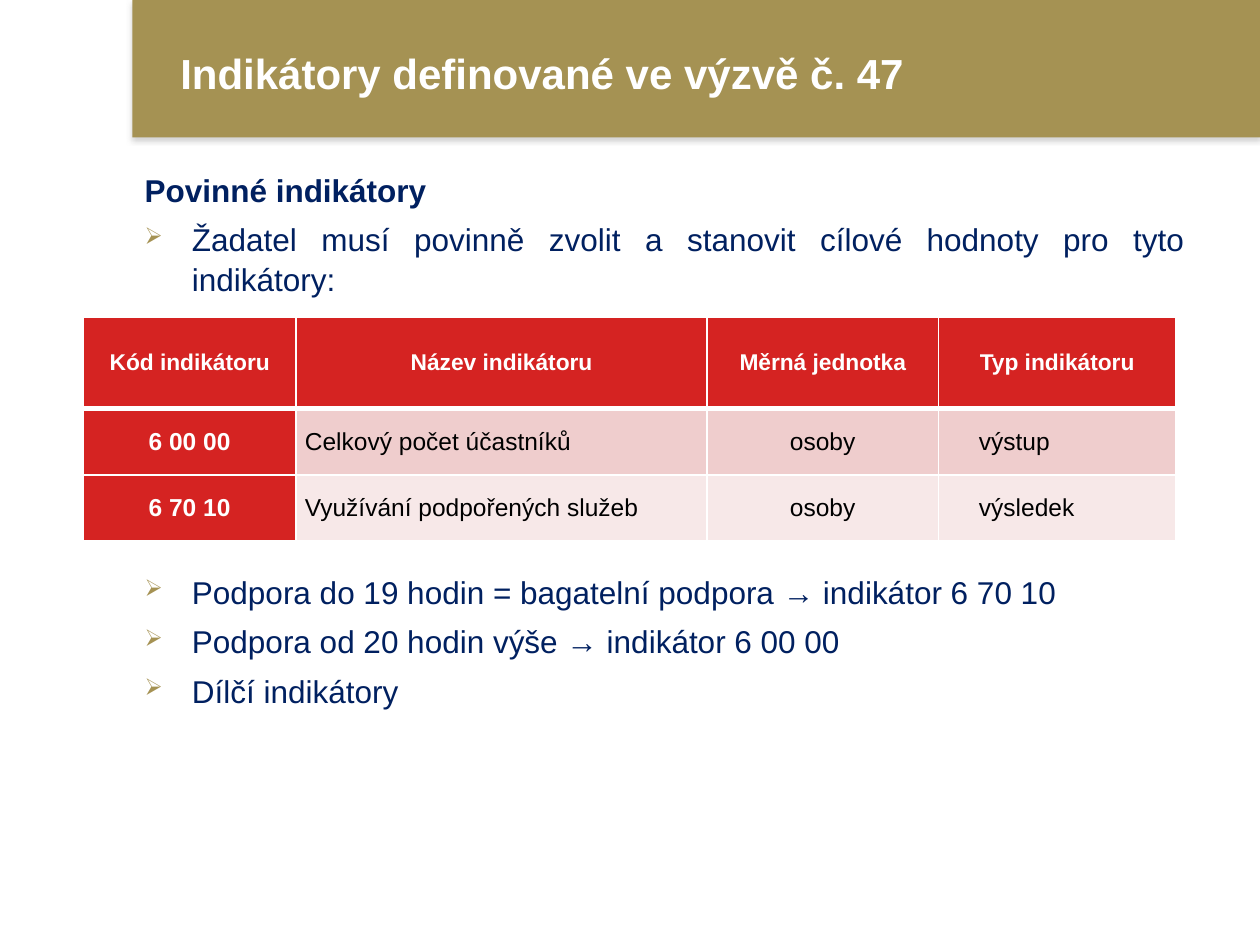
from pptx import Presentation
from pptx.dml.color import RGBColor
from pptx.enum.shapes import MSO_SHAPE
from pptx.enum.text import MSO_ANCHOR, MSO_AUTO_SIZE, PP_ALIGN
from pptx.oxml import parse_xml
from pptx.oxml.ns import nsdecls
from pptx.util import Pt

RECT = MSO_SHAPE.RECTANGLE
MIDDLE = MSO_ANCHOR.MIDDLE
FIXED = MSO_AUTO_SIZE.NONE
LEFT, CENTER, JUSTIFY = PP_ALIGN.LEFT, PP_ALIGN.CENTER, PP_ALIGN.JUSTIFY

WHITE = RGBColor(0xFF, 0xFF, 0xFF)
BLACK = RGBColor(0, 0, 0)
GOLD = RGBColor(0xA5, 0x92, 0x53)
NAVY = RGBColor(0x00, 0x20, 0x60)
RED = RGBColor(0xD5, 0x23, 0x22)
ROSE = RGBColor(0xEF, 0xCD, 0xCD)
BLUSH = RGBColor(0xF7, 0xE8, 0xE8)

HEAD = ["Kód indikátoru", "Název indikátoru", "Měrná jednotka", "Typ indikátoru"]
ROWS = [
    ["6 00 00", "Celkový počet účastníků", "osoby", "výstup"],
    ["6 70 10", "Využívání podpořených služeb", "osoby", "výsledek"],
]
ALIGNS = [CENTER, JUSTIFY, CENTER, LEFT]
WIDTHS = [121.7, 234.7, 132.5, 135.4]
HEIGHTS = [52, 38, 37.5]

# Text, bulleted, space before; the gap leaves room for the table
BODY = [
    ("Povinné indikátory", False, 0),
    ("Žadatel musí povinně zvolit a stanovit cílové hodnoty pro tyto indikátory:", True, 3.6),
    ("Podpora do 19 hodin = bagatelní podpora → indikátor 6 70 10", True, 154),
    ("Podpora od 20 hodin výše → indikátor 6 00 00", True, 3.6),
    ("Dílčí indikátory", True, 3.6),
]


def node(xml):
    """Parse one drawing element, adding its namespace."""
    tag, rest = xml[1:].split(" ", 1)
    return parse_xml(f"<{tag} {nsdecls('a')} {rest}")


class Deck:
    def __init__(self, font):
        self.font = font
        self.prs = Presentation()
        self.prs.slide_width, self.prs.slide_height = Pt(720), Pt(540)
        self.slide = self.prs.slides.add_slide(self.prs.slide_layouts[5])

    def style(self, para, size, color, bold=False, align=LEFT):
        para.alignment = align
        for run in para.runs:
            font = run.font
            font.name, font.size, font.bold = self.font, Pt(size), bold
            font.color.rgb = color

    def title(self, text, x, y, w, h):
        box = self.slide.shapes.title
        box.left, box.top, box.width, box.height = Pt(x), Pt(y), Pt(w), Pt(h)
        frame = box.text_frame
        frame.text = text
        frame.word_wrap, frame.auto_size = True, FIXED
        frame.vertical_anchor = MIDDLE
        self.style(frame.paragraphs[0], 24, WHITE, True)

    def banner(self, x, y, w, h):
        bar = self.slide.shapes.add_shape(RECT, Pt(x), Pt(y), Pt(w), Pt(h))
        bar.fill.solid()
        bar.fill.fore_color.rgb = GOLD
        bar.line.fill.background()
        bar.shadow.inherit = False
        bar.element.spPr.find("{*}effectLst").append(node(
            f'<a:outerShdw blurRad="{Pt(3.1)}" dist="{Pt(1.8)}" dir="5400000">'
            '<a:srgbClr val="808080"><a:alpha val="35000"/></a:srgbClr></a:outerShdw>'))
        # The bar lies behind the title
        self.slide.shapes.title.element.addprevious(bar.element)

    def bullet(self, para):
        props = para._p.get_or_add_pPr()
        props.set("marL", str(Pt(27)))
        props.set("indent", str(-Pt(27)))
        for xml in (f'<a:buClr ><a:srgbClr val="{GOLD}"/></a:buClr>',
                    '<a:buSzPct val="74000"/>',
                    '<a:buChar char="➢"/>'):
            props.append(node(xml))

    def body(self, items, x, y, w, h):
        frame = self.slide.shapes.add_textbox(Pt(x), Pt(y), Pt(w), Pt(h)).text_frame
        frame.word_wrap = True
        for i, (text, dot, gap) in enumerate(items):
            para = frame.add_paragraph() if i else frame.paragraphs[0]
            para.text = text
            if dot:
                self.bullet(para)
            para.line_spacing = 1.05
            para.space_before, para.space_after = Pt(gap), Pt(2)
            self.style(para, 18, NAVY, not dot, JUSTIFY if dot else LEFT)

    def edges(self, cell, base):
        props = cell._tc.get_or_add_tcPr()
        sides = (("L", 1), ("R", 1), ("T", 1), ("B", base))
        for i, (side, width) in enumerate(sides):
            props.insert(i, node(
                f'<a:ln{side} w="{Pt(width)}"><a:solidFill>'
                f'<a:srgbClr val="{WHITE}"/></a:solidFill></a:ln{side}>'))

    def cell(self, cell, text, fill, size, color, bold, align):
        cell.fill.solid()
        cell.fill.fore_color.rgb = fill
        cell.vertical_anchor = MIDDLE
        cell.margin_left = cell.margin_right = Pt(5)
        cell.margin_top = cell.margin_bottom = 0
        para = cell.text_frame.paragraphs[0]
        para.text = text
        self.style(para, size, color, bold, align)
        return para

    def table(self, x, y):
        grid = self.slide.shapes.add_table(
            len(HEIGHTS), len(WIDTHS), Pt(x), Pt(y),
            Pt(sum(WIDTHS)), Pt(sum(HEIGHTS))).table
        grid.horz_banding = False
        for col, width in zip(grid.columns, WIDTHS):
            col.width = Pt(width)
        for row, height in zip(grid.rows, HEIGHTS):
            row.height = Pt(height)
        # Header row
        for c, text in enumerate(HEAD):
            cell = grid.cell(0, c)
            para = self.cell(cell, text, RED, 13, WHITE, True, CENTER)
            para.space_after = Pt(6)
            self.edges(cell, 3)
        # Data rows, with the code column in red
        for r, (row, tint) in enumerate(zip(ROWS, (ROSE, BLUSH)), 1):
            for c, (text, align) in enumerate(zip(row, ALIGNS)):
                cell = grid.cell(r, c)
                code = c == 0
                para = self.cell(cell, text, RED if code else tint, 14,
                                 WHITE if code else BLACK, code, align)
                if align == LEFT:
                    para._p.get_or_add_pPr().set("indent", str(Pt(18)))
                    para.space_before = Pt(3)
                self.edges(cell, 1)
        # The header rule is shared with the first data row
        for c in range(len(HEAD)):
            rule = grid.cell(1, c)._tc.tcPr.find("{*}lnT")
            rule.set("w", str(Pt(3)))


def main():
    deck = Deck("Arial")
    deck.title("Indikátory definované ve výzvě č. 47", 95.8, 28.8, 588.2, 25.2)
    deck.banner(75.6, 0, 644.4, 78.5)
    deck.body(BODY, 75.6, 92.9, 608.4, 319.7)
    deck.table(47.5, 181.4)
    deck.prs.save("out.pptx")


if __name__ == "__main__":
    main()
